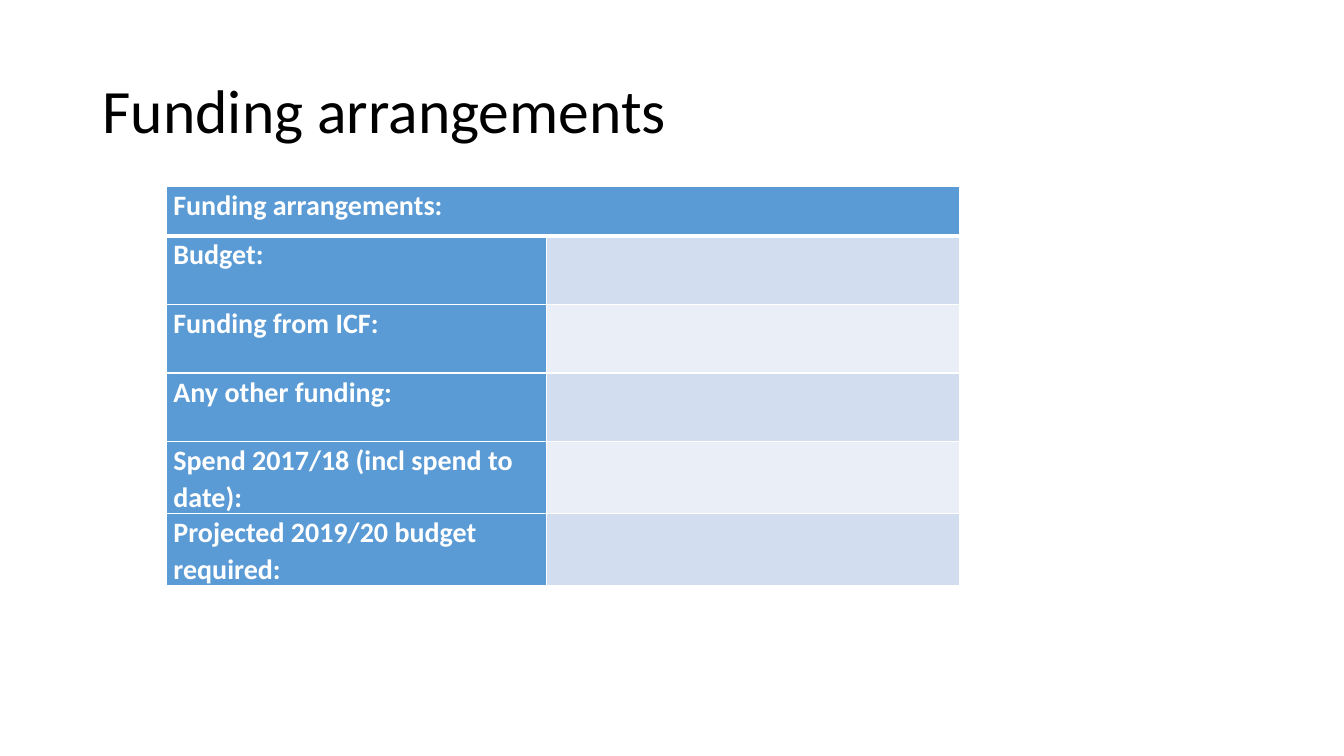
import pptx
import pptx.util
import pptx.dml.color
import pptx.enum.text
import lxml.etree
import pptx.oxml.ns

Inches = pptx.util.Inches
Pt = pptx.util.Pt
COLORS = {"title": "000000", "white": "FFFFFF", "header": "5B9BD5",
          "dark_band": "D2DEEF", "light_band": "EAEFF7"}
LABELS = ["Funding arrangements:", "Budget:", "Funding from ICF:", "Any other funding:",
          "Spend 2017/18 (incl spend to date):", "Projected 2019/20 budget required:"]
COLUMN_WIDTHS = [3.77, 4.1]
ROW_HEIGHTS = [0.49] + [0.68] * 5


def color(name):
    return pptx.dml.color.RGBColor.from_string(COLORS[name])


def add_border(cell, side, width):
    properties = cell._tc.get_or_add_tcPr()
    line = lxml.etree.SubElement(properties, pptx.oxml.ns.qn("a:ln" + side), w=str(Pt(width)))
    fill = lxml.etree.SubElement(line, pptx.oxml.ns.qn("a:solidFill"))
    lxml.etree.SubElement(fill, pptx.oxml.ns.qn("a:srgbClr"), val=COLORS["white"])


presentation = pptx.Presentation()
presentation.slide_width = Inches(13.33)
presentation.slide_height = Inches(7.5)
slide = presentation.slides.add_slide(presentation.slide_layouts[6])

title = slide.shapes.add_textbox(Inches(0.92), Inches(0.4), Inches(11.5), Inches(1.45))
title.text_frame.word_wrap = True
title.text_frame.vertical_anchor = pptx.enum.text.MSO_ANCHOR.MIDDLE
paragraph = title.text_frame.paragraphs[0]
paragraph.text = "Funding arrangements"
paragraph.line_spacing = 0.9
paragraph.font.name = "Calibri"
paragraph.font.size = Pt(44)
paragraph.font.color.rgb = color("title")

table = slide.shapes.add_table(
    len(LABELS), len(COLUMN_WIDTHS), Inches(1.65), Inches(1.85),
    Inches(sum(COLUMN_WIDTHS)), Inches(sum(ROW_HEIGHTS))).table
table.first_col = True
for column, width in zip(table.columns, COLUMN_WIDTHS):
    column.width = Inches(width)
for row, height in zip(table.rows, ROW_HEIGHTS):
    row.height = Inches(height)
table.cell(0, 0).merge(table.cell(0, 1))

for row_index, label in enumerate(LABELS):
    band = "dark_band" if row_index % 2 else "light_band"
    label_cell, value_cell = table.rows[row_index].cells
    for cell, fill in ((label_cell, "header"), (value_cell, band if row_index else "header")):
        cell.margin_left = cell.margin_right = Inches(0.07)
        cell.margin_top = cell.margin_bottom = 0
        for side in "LRTB":
            header_edge = (row_index, side) in ((0, "B"), (1, "T"))
            add_border(cell, side, 3 if header_edge else 1)
        cell.fill.solid()
        cell.fill.fore_color.rgb = color(fill)
    paragraph = label_cell.text_frame.paragraphs[0]
    paragraph.text = label
    paragraph.line_spacing = 1.07
    paragraph.font.name = "Calibri"
    paragraph.font.size = Pt(20)
    paragraph.font.bold = True
    paragraph.font.color.rgb = color("white")

presentation.save("out.pptx")
